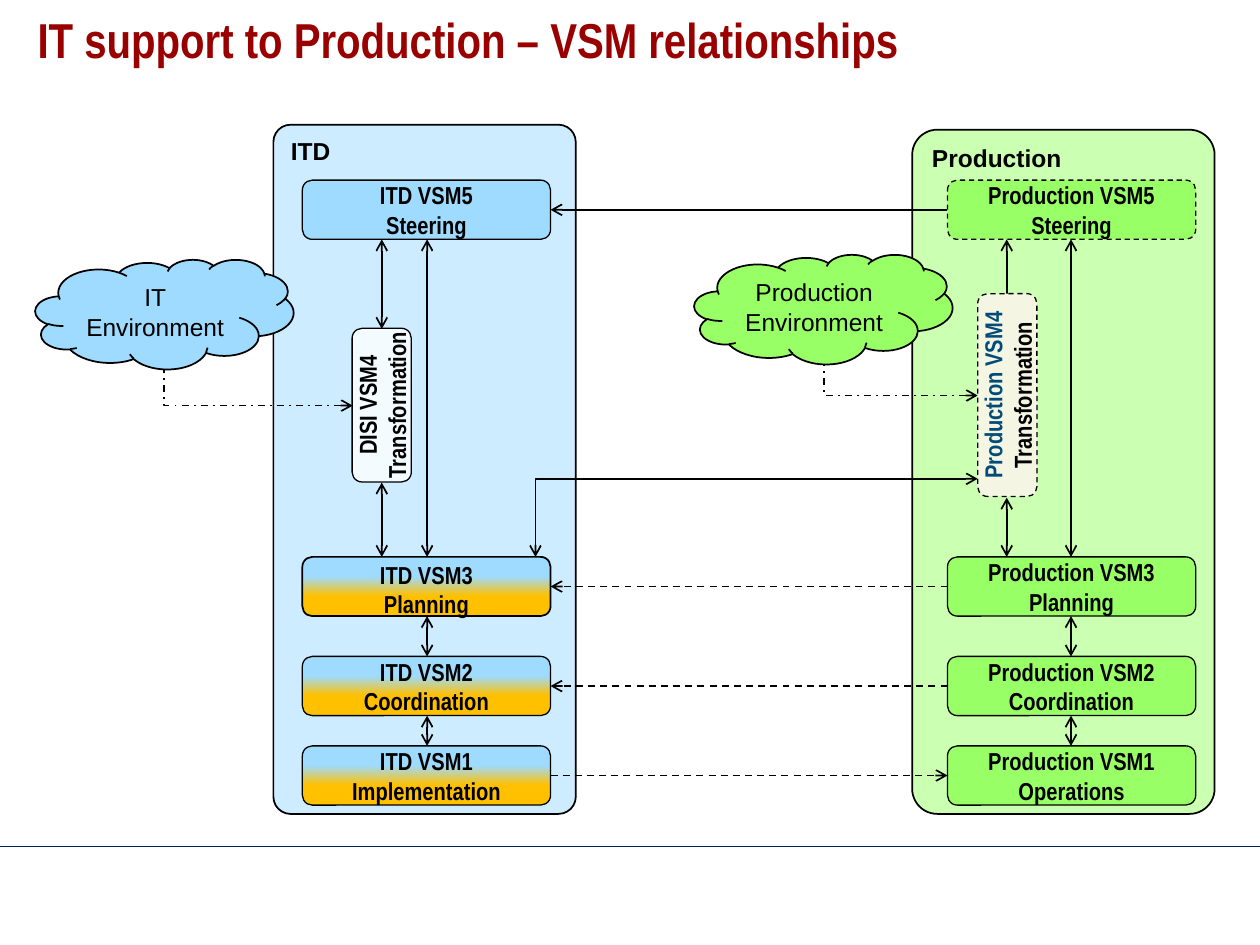
"""Draw the VSM relationships between IT and Production."""
from pptx import Presentation
from pptx.dml.color import RGBColor
from pptx.enum.dml import MSO_LINE as Dash
from pptx.enum.shapes import MSO_CONNECTOR as Link, MSO_SHAPE as Form
from pptx.enum.text import MSO_ANCHOR as Anchor, PP_ALIGN as Align
from pptx.oxml.ns import qn
from pptx.util import Inches, Pt
from lxml.etree import SubElement

BLACK = RGBColor(0x00, 0x00, 0x00)
RED = RGBColor(0x99, 0x00, 0x00)
NAVY = RGBColor(0x00, 0x20, 0x60)
TEAL = RGBColor(0x00, 0x4B, 0x78)
BLUE = RGBColor(0x9E, 0xDB, 0xFF)
GREEN = RGBColor(0x99, 0xFF, 0x66)
GOLD = RGBColor(0xFF, 0xC0, 0x00)
ICE = RGBColor(0xF3, 0xFB, 0xFF)
CREAM = RGBColor(0xF5, 0xF5, 0xE3)

BOX_W, BOX_H = 1.97, 0.47
IT_X, PROD_X = 2.4, 7.52
IT_END = IT_X + BOX_W
ROWS = {5: 1.43, 3: 4.42, 2: 5.21, 1: 5.92}


class Board:
    def __init__(self, slide):
        self.shapes = slide.shapes
        self.wide, self.narrow = "Arial", "Arial Narrow"
        self.size = 14

    def label(self, frame, text, font, bold=True, align=Align.CENTER,
              size=None, color=BLACK):
        frame.text = text
        for para in frame.paragraphs:
            para.alignment = align
            for run in para.runs:
                run.font.name, run.font.bold = font, bold
                run.font.size = Pt(size or self.size)
                run.font.color.rgb = color

    def title(self, text):
        box = self.shapes.add_textbox(
            Inches(0.2), Inches(0.08), Inches(9.61), Inches(0.83))
        frame = box.text_frame
        frame.word_wrap = True
        self.label(frame, text, self.narrow, align=Align.LEFT, size=28, color=RED)
        frame.paragraphs[0].line_spacing = 0.9

    def shape(self, form, x, y, w, h, fill, width):
        item = self.shapes.add_shape(
            form, Inches(x), Inches(y), Inches(w), Inches(h))
        item.shadow.inherit = False
        item.fill.solid()
        item.fill.fore_color.rgb = fill
        item.line.color.rgb = BLACK
        item.line.width = Pt(width)
        item.text_frame.word_wrap = False
        item.text_frame.vertical_anchor = Anchor.TOP
        return item

    def panel(self, text, x, y, w, h, fill, curve):
        item = self.shape(Form.ROUNDED_RECTANGLE, x, y, w, h, fill, 1)
        item.adjustments[0] = curve
        tint = item._element.spPr.find(qn("a:solidFill"))[0]
        SubElement(tint, qn("a:alpha"), val="50000")
        self.label(item.text_frame, text, self.wide, align=Align.LEFT)

    def cloud(self, text, x, y, fill):
        item = self.shape(Form.CLOUD, x, y, 2.05, 0.87, fill, 1)
        self.label(item.text_frame, text, self.wide, bold=False)

    def box(self, text, x, y, fill, w=BOX_W, dash=False, turn=0, width=0.75):
        item = self.shape(Form.ROUNDED_RECTANGLE, x, y, w, BOX_H, fill, width)
        item.rotation = turn
        if dash:
            item.line.dash_style = Dash.DASH
        frame = item.text_frame
        frame.word_wrap = True
        frame.vertical_anchor = Anchor.MIDDLE
        frame.margin_left = frame.margin_right = 0
        frame.margin_top = frame.margin_bottom = 0
        self.label(frame, text, self.narrow)
        return item

    def blend(self, item):
        item.fill.gradient()
        item.fill.gradient_angle = 270
        for stop, color, place in zip(
                item.fill.gradient_stops, (BLUE, GOLD), (0.33, 0.66)):
            stop.color.rgb, stop.position = color, place

    def line(self, x1, y1, x2, y2, ends="", dash=None, bent=False,
             color=BLACK, width=1):
        item = self.shapes.add_connector(
            Link.ELBOW if bent else Link.STRAIGHT,
            Inches(x1), Inches(y1), Inches(x2), Inches(y2))
        item.line.color.rgb = color
        item.line.width = Pt(width)
        if dash:
            item.line.dash_style = dash
        props = item._element.spPr
        if bent:
            props.find(qn("a:prstGeom")).set("prst", "bentConnector2")
        for end in ends.split():
            SubElement(props.find(qn("a:ln")), qn(f"a:{end}End"), type="arrow")
        SubElement(props, qn("a:effectLst"))


def main():
    deck = Presentation()
    deck.slide_width, deck.slide_height = Inches(10), Inches(7.5)
    board = Board(deck.slides.add_slide(deck.slide_layouts[6]))
    both = "head tail"

    board.line(0, 6.72, 10, 6.72, color=NAVY, width=0.75)
    board.panel("Production", 7.24, 1.03, 2.4, 5.43, GREEN, 0.083)
    board.panel("ITD", 2.17, 0.99, 2.4, 5.47, BLUE, 0.057)
    board.title("IT support to Production – VSM relationships")

    roles = {5: ("Steering", "Steering"), 3: ("Planning", "Planning"),
             2: ("Coordination", "Coordination"),
             1: ("Implementation", "Operations")}
    for level, (left, right) in roles.items():
        y = ROWS[level]
        item = board.box(f"ITD VSM{level}\n{left}", IT_X, y, BLUE,
                         width=1 if level == 3 else 0.75)
        if level != 5:
            board.blend(item)
        if level == 3:
            item.text_frame.vertical_anchor = Anchor.TOP
        board.box(f"Production VSM{level}\n{right}", PROD_X, y, GREEN,
                  dash=level == 5)
        mid = y + BOX_H / 2
        if level == 1:
            board.line(IT_END, mid, PROD_X, mid, "tail", Dash.DASH)
        else:
            board.line(PROD_X, mid, IT_END, mid, "tail",
                       None if level == 5 else Dash.DASH)

    for x in (3.39, 8.5):
        for top, low in ((5, 3), (3, 2), (2, 1)):
            board.line(x, ROWS[top] + BOX_H, x, ROWS[low], both)
    for x, top, low in ((3.03, 2.61, 3.83), (7.99, 2.61, 3.95)):
        board.line(x, ROWS[5] + BOX_H, x, top, both)
        board.line(x, low, x, ROWS[3], both)
    board.line(7.76, 3.8, 4.25, ROWS[3], both, bent=True)
    board.line(7.76, 3.14, 6.54, 2.88, "head", Dash.DASH_DOT, bent=True)
    board.line(2.8, 3.22, 1.3, 2.92, "head", Dash.DASH_DOT, bent=True)

    board.cloud("IT\nEnvironment", 0.28, 2.06, BLUE)
    board.cloud("Production\nEnvironment", 5.51, 2.02, GREEN)
    board.box("DISI VSM4\nTransformation", 2.42, 2.98, ICE, w=1.22, turn=270)
    change = board.box("Production VSM4\nTransformation", 7.19, 2.9, CREAM,
                       w=1.61, dash=True, turn=270)
    change.text_frame.paragraphs[0].runs[0].font.color.rgb = TEAL
    deck.save("out.pptx")


if __name__ == "__main__":
    main()
